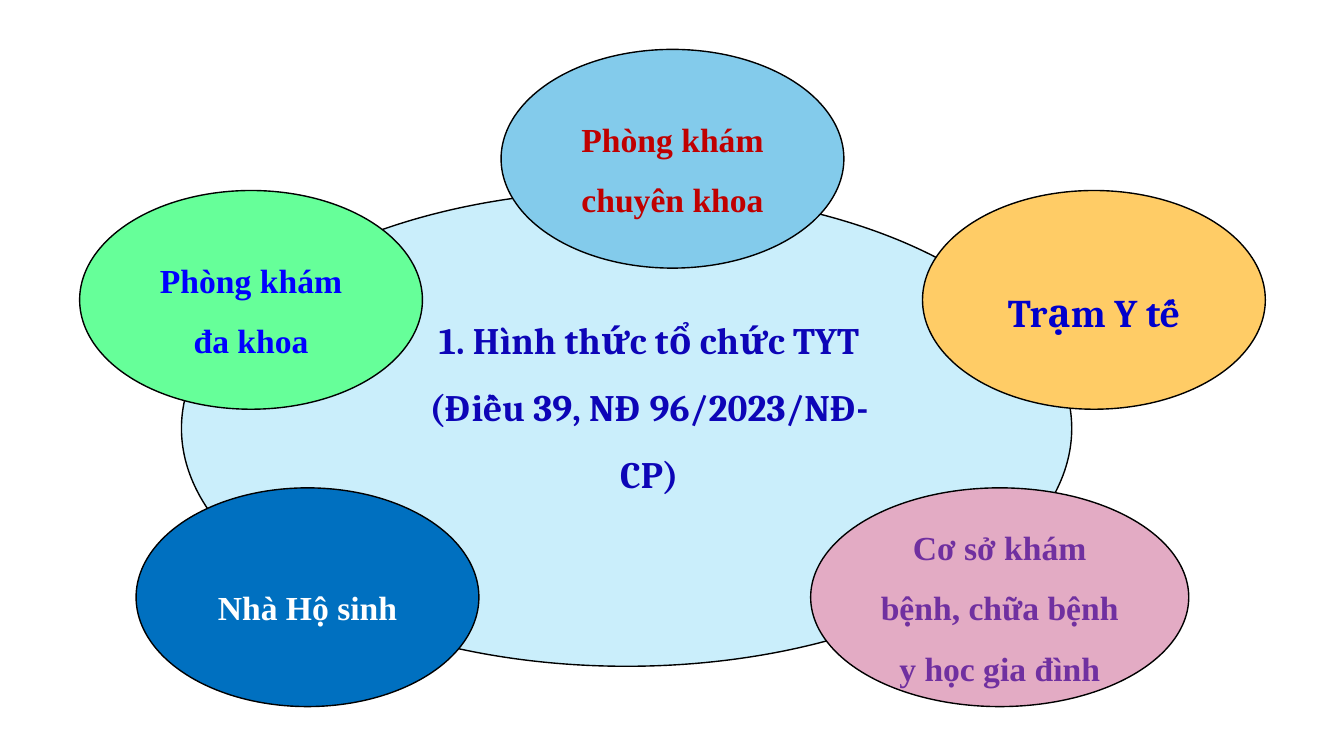
from pptx import Presentation
from pptx.dml.color import RGBColor
from pptx.enum.shapes import MSO_SHAPE as Shape
from pptx.enum.text import MSO_ANCHOR as Anchor, MSO_AUTO_SIZE as Fit, PP_ALIGN as Align
from pptx.util import Inches, Pt

WIDE, HIGH = 13.33, 7.5
SERIF, TITLE = "Times New Roman", "Cambria"
OVAL_W, OVAL_H = 3.4, 2.17
TOP, MID, LOW = 0.49, 1.89, 4.84
HUB = (1.8, MID, 8.83, 4.72)
HEAD = (4.14, 2.87, 4.6, 2.12)
HEAD_TEXT = "1. Hình thức tổ chức TYT (Điều 39, NĐ 96/2023/NĐ-CP)"

FORMS = [
    ("Phòng khám đa khoa", 0.79, MID, OVAL_W, "66FF99", SERIF, 24, "0000FF"),
    ("Phòng khám chuyên khoa", 4.97, TOP, OVAL_W, "83CBEB", SERIF, 24, "C00000"),
    ("Trạm Y tế", 9.15, MID, OVAL_W, "FFCC66", TITLE, 28, "0000CC"),
    ("Cơ sở khám bệnh, chữa bệnh y học gia đình", 8.04, LOW, 3.75, "E3ABC4", SERIF, 24, "7030A0"),
    ("Nhà Hộ sinh", 1.35, LOW, OVAL_W, "0070C0", SERIF, 24, "FFFFFF"),
]


def color(code):
    return RGBColor.from_string(code)


def add_oval(group, box, fill):
    oval = group.shapes.add_shape(Shape.OVAL, *map(Inches, box))
    oval.shadow.inherit = False
    oval.fill.solid()
    oval.fill.fore_color.rgb = color(fill)
    oval.line.color.rgb = color("000000")
    oval.line.width = Pt(1)
    return oval


def write(shape, text, face, size, ink, anchor):
    frame = shape.text_frame
    frame.text = text
    frame.word_wrap = True
    frame.vertical_anchor = anchor
    para = frame.paragraphs[0]
    para.alignment = Align.CENTER
    para.line_spacing = 1.5
    font = para.runs[0].font
    font.name, font.size, font.bold = face, Pt(size), True
    font.color.rgb = color(ink)


def main():
    deck = Presentation()
    deck.slide_width, deck.slide_height = Inches(WIDE), Inches(HIGH)
    slide = deck.slides.add_slide(deck.slide_layouts[6])
    group = slide.shapes.add_group_shape()
    add_oval(group, HUB, "CAEEFB")
    for text, left, top, width, fill, face, size, ink in FORMS:
        oval = add_oval(group, (left, top, width, OVAL_H), fill)
        write(oval, text, face, size, ink, Anchor.MIDDLE)
    head = slide.shapes.add_textbox(*map(Inches, HEAD))
    write(head, HEAD_TEXT, TITLE, 26.7, "0D05B7", Anchor.TOP)
    head.text_frame.auto_size = Fit.SHAPE_TO_FIT_TEXT
    deck.save("out.pptx")


if __name__ == "__main__":
    main()
